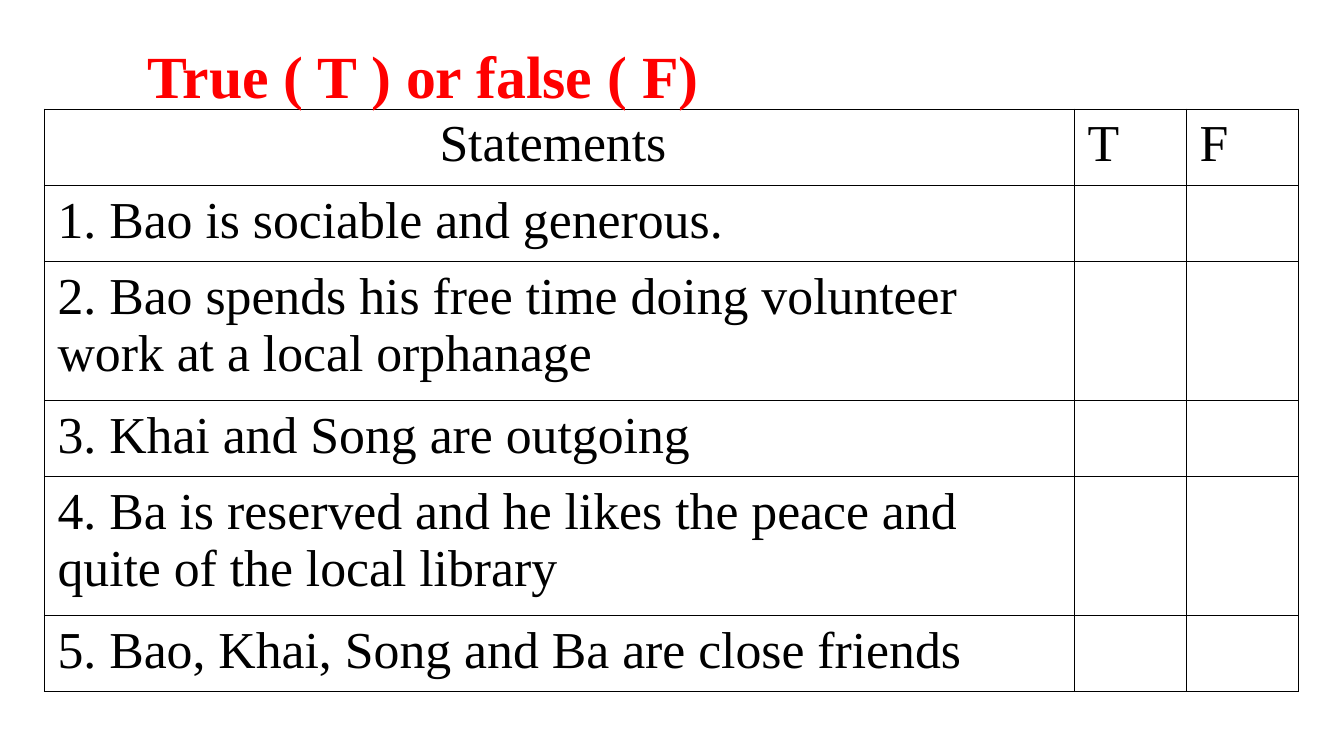
from dataclasses import dataclass

from lxml.etree import SubElement
from pptx import Presentation
from pptx.dml.color import RGBColor
from pptx.enum.text import MSO_AUTO_SIZE, PP_ALIGN as Align
from pptx.oxml.ns import qn
from pptx.util import Cm, Pt


@dataclass(frozen=True)
class Theme:
    font: str = "Times New Roman"
    title_color: str = "FF0000"
    text_color: str = "000000"
    cell_color: str = "FFFFFF"
    border_color: str = "000000"
    title_size: float = 42.7
    table_size: float = 37
    border_width: float = 1


THEME = Theme()
STATEMENTS = [
    "1. Bao is sociable and generous.",
    "2. Bao spends his free time doing volunteer work at a local orphanage",
    "3. Khai and Song are outgoing",
    "4. Ba is reserved and he likes the peace and quite of the local library",
    "5. Bao, Khai, Song and Ba are close friends",
]
ROWS = [("Statements ", "T", "F")] + [(text, "", "") for text in STATEMENTS]
SINGLE_ROW, DOUBLE_ROW = 1.92, 3.5
ROW_HEIGHTS = [SINGLE_ROW, SINGLE_ROW, DOUBLE_ROW, SINGLE_ROW, DOUBLE_ROW, SINGLE_ROW]
ANSWER_WIDTH = 2.82


def write_text(frame, text, size=THEME.table_size, color=THEME.text_color,
               bold=False, align=Align.LEFT):
    frame.word_wrap = True
    paragraph = frame.paragraphs[0]
    paragraph.alignment = align
    run = paragraph.add_run()
    run.text = text
    run.font.name = THEME.font
    run.font.size = Pt(size)
    run.font.bold = bold
    run.font.color.rgb = RGBColor.from_string(color)


def set_margins(target, horizontal=0.33, vertical=0.17):
    target.margin_left = target.margin_right = Cm(horizontal)
    target.margin_top = target.margin_bottom = Cm(vertical)


def format_cell(cell):
    """Draw the four borders, then fill the cell, in the order the schema wants."""
    set_margins(cell)
    properties = cell._tc.get_or_add_tcPr()
    for side in ("a:lnL", "a:lnR", "a:lnT", "a:lnB"):
        line = SubElement(properties, qn(side), w=str(Pt(THEME.border_width)))
        fill = SubElement(line, qn("a:solidFill"))
        SubElement(fill, qn("a:srgbClr"), val=THEME.border_color)
    cell.fill.solid()
    cell.fill.fore_color.rgb = RGBColor.from_string(THEME.cell_color)


def add_title(slide, left, top, width, height):
    box = slide.shapes.add_textbox(Cm(left), Cm(top), Cm(width), Cm(height))
    frame = box.text_frame
    set_margins(frame)
    write_text(frame, "True ( T ) or false ( F)", size=THEME.title_size,
               color=THEME.title_color, bold=True)
    frame.auto_size = MSO_AUTO_SIZE.SHAPE_TO_FIT_TEXT


def add_statement_table(slide, left, top, width):
    widths = [width - 2 * ANSWER_WIDTH, ANSWER_WIDTH, ANSWER_WIDTH]
    frame = slide.shapes.add_table(len(ROWS), len(widths), Cm(left), Cm(top),
                                   Cm(width), Cm(sum(ROW_HEIGHTS)))
    table = frame.table
    table.first_row = table.horz_banding = False
    for column, column_width in zip(table.columns, widths):
        column.width = Cm(column_width)
    for row_index, (row, height) in enumerate(zip(table.rows, ROW_HEIGHTS)):
        row.height = Cm(height)
        for column_index, (cell, text) in enumerate(zip(row.cells, ROWS[row_index])):
            format_cell(cell)
            if text:
                centred = row_index == 0 and column_index == 0
                write_text(cell.text_frame, text,
                           align=Align.CENTER if centred else Align.LEFT)


def main():
    presentation = Presentation()
    presentation.slide_width, presentation.slide_height = Cm(33.87), Cm(19.05)
    slide = presentation.slides.add_slide(presentation.slide_layouts[6])
    add_statement_table(slide, left=1.12, top=2.75, width=31.6)
    add_title(slide, left=3.38, top=0.8, width=16.36, height=2.08)
    presentation.save("out.pptx")


if __name__ == "__main__":
    main()
